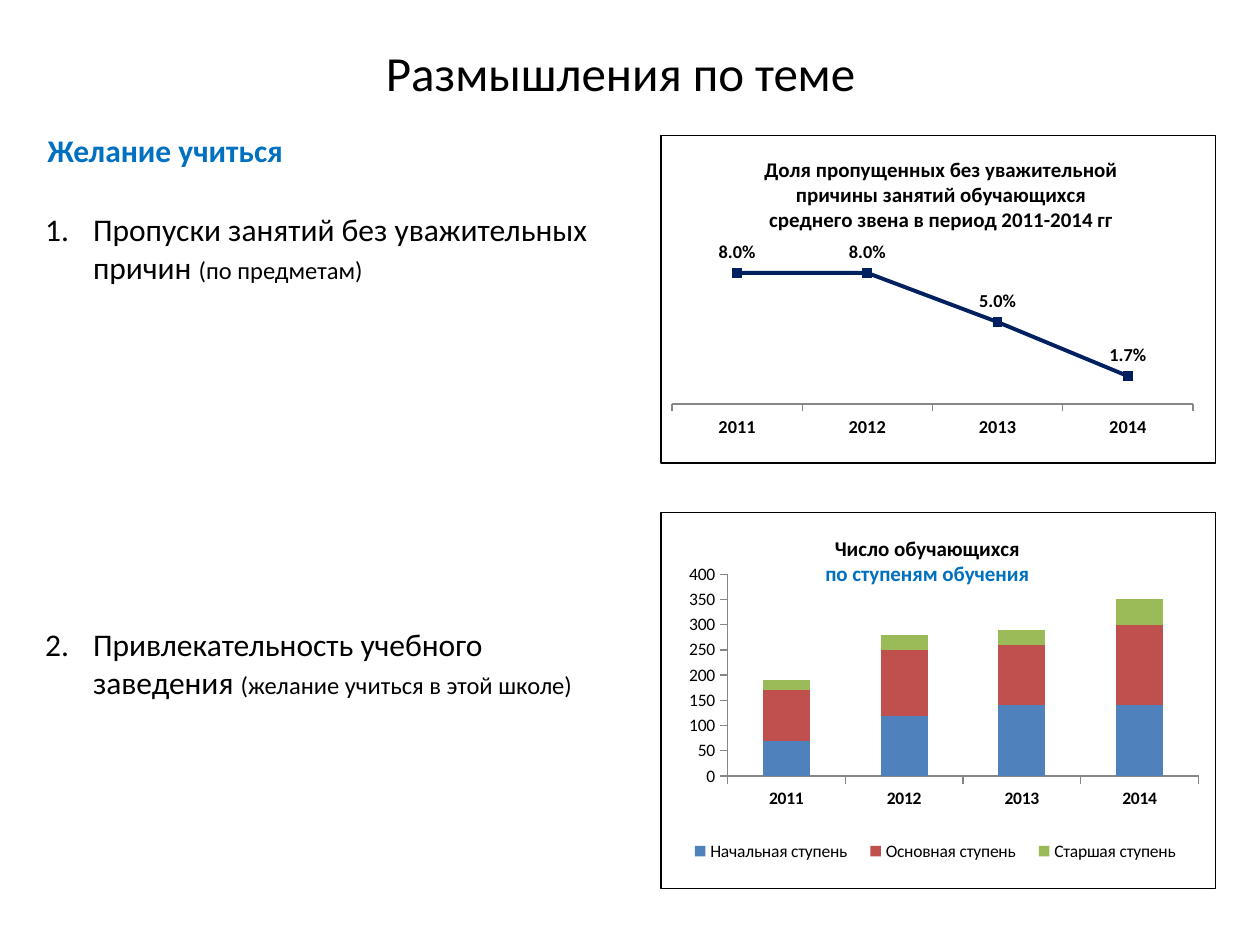
from dataclasses import dataclass
from lxml.etree import SubElement
from pptx import Presentation
from pptx.chart.data import CategoryChartData
from pptx.dml.color import RGBColor
from pptx.enum.chart import (XL_CHART_TYPE, XL_LABEL_POSITION, XL_LEGEND_POSITION,
                             XL_MARKER_STYLE, XL_TICK_MARK)
from pptx.enum.text import MSO_ANCHOR, MSO_AUTO_SIZE, PP_ALIGN
from pptx.oxml import parse_xml
from pptx.oxml.ns import nsdecls, qn
from pptx.util import Inches, Pt


@dataclass(frozen=True)
class Theme:
    font: str = "Calibri"
    black: RGBColor = RGBColor(0, 0, 0)
    accent: RGBColor = RGBColor(0x00, 0x70, 0xC0)
    navy: RGBColor = RGBColor(0x00, 0x20, 0x60)
    axis: RGBColor = RGBColor(0x86, 0x86, 0x86)
    stages: tuple = (RGBColor(0x4F, 0x81, 0xBD), RGBColor(0xC0, 0x50, 0x4D),
                     RGBColor(0x9B, 0xBB, 0x59))
    title: float = 28
    body: float = 18
    note: float = 14
    chart_title: float = 12
    chart_label: float = 10.5
    chart_text: float = 10


THEME = Theme()
YEARS = ("2011", "2012", "2013", "2014")
CHART_LEFT, CHART_WIDTH = 5.24, 4.41


def set_values(target, values):
    for name, value in values.items():
        setattr(target, name, value)


def format_font(font, size, color=THEME.black, bold=False):
    set_values(font, {"name": THEME.font, "size": Pt(size), "bold": bold})
    font.color.rgb = color


def add_run(paragraph, text, size, color=THEME.black, bold=False):
    run = paragraph.add_run()
    run.text = text
    format_font(run.font, size, color, bold)


def place(shape, left, top, width, height):
    set_values(shape, {"left": Inches(left), "top": Inches(top),
                       "width": Inches(width), "height": Inches(height)})
    set_values(shape.text_frame, {"word_wrap": True, "auto_size": MSO_AUTO_SIZE.NONE,
                                  "vertical_anchor": MSO_ANCHOR.TOP})


def add_text_box(slide, *position):
    shape = slide.shapes.add_textbox(0, 0, 0, 0)
    place(shape, *position)
    return shape.text_frame


def add_numbered_list(slide, position, items, gap):
    frame = add_text_box(slide, *position)
    for index, (text, note) in enumerate(items):
        paragraph = frame.add_paragraph() if index else frame.paragraphs[0]
        paragraph.space_before = Pt(gap if index else 0)
        add_run(paragraph, text, THEME.body)
        add_run(paragraph, note, THEME.note)
        properties = paragraph._p.get_or_add_pPr()
        properties.set("marL", str(Inches(0.38)))
        properties.set("indent", str(-Inches(0.38)))
        SubElement(properties, qn("a:buFont"), typeface="+mj-lt")
        SubElement(properties, qn("a:buAutoNum"), type="arabicPeriod")


def set_layout(element, index, inner=False, **box):
    for old in element.findall(qn("c:layout")):
        element.remove(old)
    target = '<c:layoutTarget val="inner"/>' if inner else ""
    modes = "".join(f'<c:{name}Mode val="edge"/>' for name in ("x", "y"))
    values = "".join(f'<c:{name} val="{value}"/>' for name, value in box.items())
    element.insert(index, parse_xml(
        f'<c:layout {nsdecls("c")}><c:manualLayout>{target}{modes}{values}'
        '</c:manualLayout></c:layout>'))


def add_border(chart):
    chart.element.find(qn("c:chart")).addnext(parse_xml(
        f'<c:spPr {nsdecls("c", "a")}><a:solidFill><a:srgbClr val="FFFFFF"/></a:solidFill>'
        f'<a:ln w="{Pt(0.75)}"><a:solidFill><a:srgbClr val="{THEME.black}"/></a:solidFill>'
        '</a:ln></c:spPr>'))


def format_axis(axis):
    set_values(axis, {"has_major_gridlines": False, "major_tick_mark": XL_TICK_MARK.OUTSIDE,
                      "minor_tick_mark": XL_TICK_MARK.NONE})
    axis.format.line.color.rgb = THEME.axis
    axis.format.line.width = Pt(0.75)


def add_chart(slide, kind, top, height, series, title, title_at, plot_box):
    data = CategoryChartData()
    data.categories = YEARS
    for name, values in series:
        data.add_series(name, values)
    chart = slide.shapes.add_chart(kind, Inches(CHART_LEFT), Inches(top), Inches(CHART_WIDTH),
                                   Inches(height), data).chart
    format_font(chart.font, THEME.chart_text)
    add_border(chart)
    chart.has_legend = False
    chart.has_title = True
    frame = chart.chart_title.text_frame
    for index, (line, color) in enumerate(title):
        paragraph = frame.add_paragraph() if index else frame.paragraphs[0]
        paragraph.alignment = PP_ALIGN.CENTER
        add_run(paragraph, line, THEME.chart_title, color, True)
    set_layout(chart.chart_title._element, 1, x=title_at[0], y=title_at[1])
    plot_area = chart.element.find(".//" + qn("c:plotArea"))
    set_layout(plot_area, 0, inner=True, **dict(zip("xywh", plot_box)))
    format_axis(chart.category_axis)
    format_axis(chart.value_axis)
    chart.plots[0].vary_by_categories = False
    return chart


def add_stage_chart(slide):
    series = (("Начальная ступень", (70, 120, 140, 140)),
              ("Основная ступень", (100, 130, 120, 160)),
              ("Старшая ступень", (20, 30, 30, 50)))
    title = (("Число обучающихся", THEME.black), ("по ступеням обучения", THEME.accent))
    chart = add_chart(slide, XL_CHART_TYPE.COLUMN_STACKED, 4.06, 3, series, title,
                      (0.29, 0.05), (0.12, 0.165, 0.85, 0.536))
    format_font(chart.category_axis.tick_labels.font, THEME.chart_text, bold=True)
    set_values(chart.value_axis, {"minimum_scale": 0, "maximum_scale": 400, "major_unit": 50})
    set_values(chart.plots[0], {"gap_width": 150, "overlap": 100})
    for stage, color in zip(chart.series, THEME.stages):
        stage.format.fill.solid()
        stage.format.fill.fore_color.rgb = color
    chart.has_legend = True
    set_values(chart.legend, {"position": XL_LEGEND_POSITION.BOTTOM, "include_in_layout": False})
    format_font(chart.legend.font, THEME.chart_text)
    set_layout(chart.legend._element, 1, x=0.03, y=0.85, w=0.93, h=0.1)


def add_absence_chart(slide):
    lines = ("Доля пропущенных без уважительной", "причины занятий обучающихся",
             "среднего звена в период 2011-2014 гг")
    chart = add_chart(slide, XL_CHART_TYPE.LINE_MARKERS, 1.07, 2.61,
                      (("Series 1", (0.08, 0.08, 0.05, 0.017)),),
                      [(line, THEME.black) for line in lines],
                      (0.18, 0.05), (0.02, 0.37, 0.94, 0.45))
    format_font(chart.category_axis.tick_labels.font, THEME.chart_label, bold=True)
    set_values(chart.value_axis, {"minimum_scale": 0, "maximum_scale": 0.09, "visible": False})
    set_values(chart.value_axis.tick_labels,
               {"number_format": "0.0%", "number_format_is_linked": False})
    share = chart.series[0]
    share.smooth = False
    share.format.line.color.rgb = THEME.navy
    share.format.line.width = Pt(2.25)
    set_values(share.marker, {"style": XL_MARKER_STYLE.SQUARE, "size": 5})
    share.marker.format.fill.solid()
    share.marker.format.fill.fore_color.rgb = THEME.navy
    share.marker.format.line.color.rgb = THEME.navy
    labels = share.data_labels
    set_values(labels, {"show_value": True, "position": XL_LABEL_POSITION.ABOVE,
                        "number_format": "0.0%", "number_format_is_linked": False})
    format_font(labels.font, THEME.chart_label, bold=True)


def main():
    presentation = Presentation()
    set_values(presentation, {"slide_width": Inches(10), "slide_height": Inches(7.5)})
    slide = presentation.slides.add_slide(presentation.slide_layouts[5])
    title = slide.shapes.title
    place(title, 0.2, 0.29, 9.45, 0.57)
    heading = title.text_frame.paragraphs[0]
    heading.alignment = PP_ALIGN.CENTER
    add_run(heading, "Размышления по теме", THEME.title)
    subtitle = add_text_box(slide, 0.28, 0.99, 9.37, 0.4)
    add_run(subtitle.paragraphs[0], "Желание учиться", THEME.body, THEME.accent, True)
    items = (("Пропуски занятий без уважительных причин ", "(по предметам)"),
             ("Привлекательность учебного заведения ", "(желание учиться в этой школе)"))
    add_numbered_list(slide, (0.26, 1.62, 4.65, 4.34), items, gap=194)
    add_stage_chart(slide)
    add_absence_chart(slide)
    presentation.save("out.pptx")


if __name__ == "__main__":
    main()
